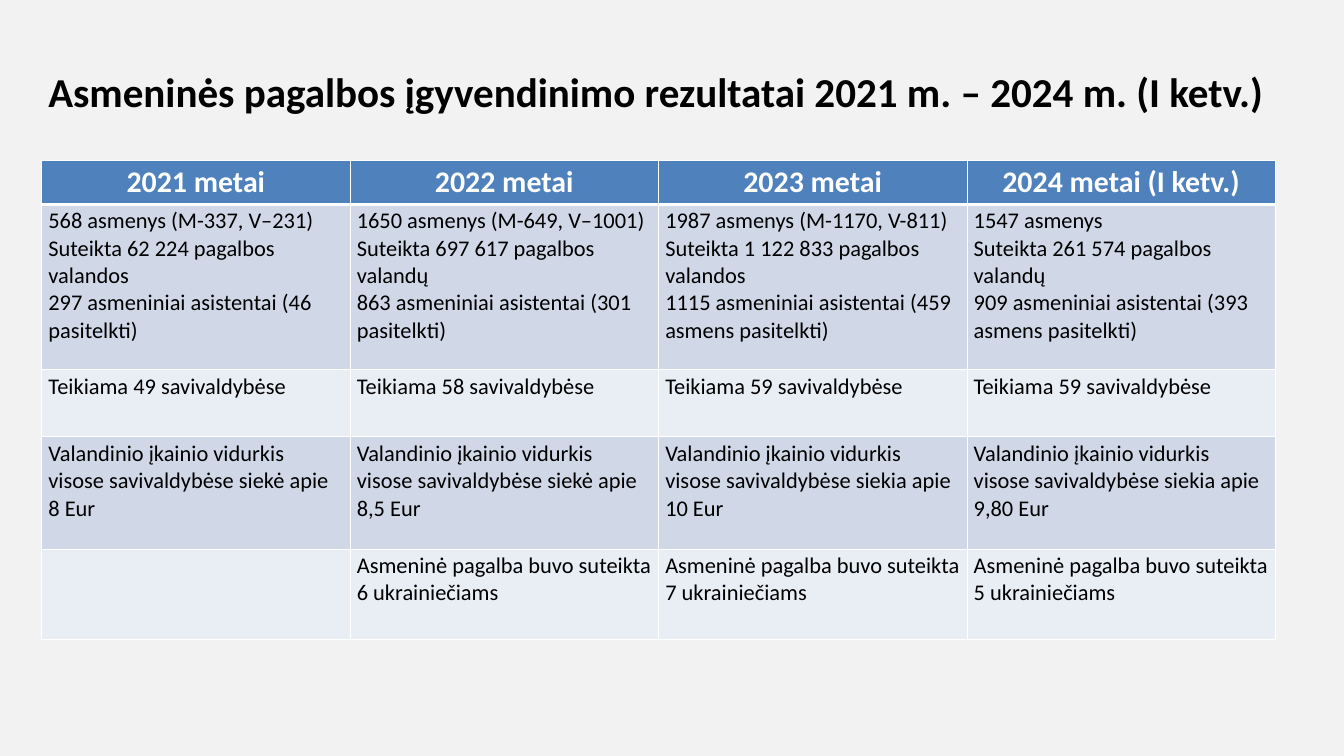
"""Build a slide comparing personal assistance results by year."""
from dataclasses import dataclass

from lxml import etree
from pptx import Presentation
from pptx.dml.color import RGBColor
from pptx.enum.text import MSO_ANCHOR, PP_ALIGN
from pptx.oxml.ns import qn
from pptx.util import Pt

CENTER, LEFT = PP_ALIGN.CENTER, PP_ALIGN.LEFT
MIDDLE = MSO_ANCHOR.MIDDLE
FONT = "Calibri"
COLORS = {
    "page": "F2F2F2",
    "header": "4F81BD",
    "dark band": "D0D8E8",
    "light band": "E9EDF4",
    "text": "000000",
    "white": "FFFFFF",
}
LEFT_EDGE, CONTENT_WIDTH = 44.64, 1321.92
ROW_HEIGHTS = [46.8, 177.12, 72, 120.24, 96.48]
THIN, THICK = 1, 3


@dataclass
class YearResult:
    """Results of one year, shown as one table column."""

    year: str
    people: str
    hours: str
    assistants: str
    municipalities: int
    rate: str
    ukrainians: str

    def cell_texts(self) -> list[list[str]]:
        """Return the paragraphs of each cell from top to bottom."""
        return [
            [self.year],
            [
                f"{self.people}",
                f"Suteikta {self.hours}",
                f"{self.assistants} pasitelkti)",
            ],
            [f"Teikiama {self.municipalities} savivaldybėse"],
            [f"Valandinio įkainio vidurkis visose savivaldybėse {self.rate} Eur"],
            [f"Asmeninė pagalba buvo suteikta {self.ukrainians} ukrainiečiams"]
            if self.ukrainians else [],
        ]


@dataclass
class TextStyle:
    """Look of a paragraph."""

    size: float
    color: str
    bold: bool = False
    align: PP_ALIGN = LEFT


TITLE_STYLE = TextStyle(44, "text", bold=True)
HEADER_STYLE = TextStyle(32, "white", bold=True, align=CENTER)
BODY_STYLE = TextStyle(24, "text")

RESULTS = [
    YearResult("2021 metai", "568 asmenys (M-337, V–231)", "62 224 pagalbos valandos",
               "297 asmeniniai asistentai (46", 49, "siekė apie 8", ""),
    YearResult("2022 metai", "1650 asmenys (M-649, V–1001)", "697 617 pagalbos valandų",
               "863 asmeniniai asistentai (301", 58, "siekė apie 8,5", "6"),
    YearResult("2023 metai", "1987 asmenys (M-1170, V-811)", "1 122 833 pagalbos valandos",
               "1115 asmeniniai asistentai (459 asmens", 59, "siekia apie 10", "7"),
    YearResult("2024 metai (I ketv.)", "1547 asmenys", "261 574 pagalbos valandų",
               "909 asmeniniai asistentai (393 asmens", 59, "siekia apie 9,80", "5"),
]


def rgb(name: str) -> RGBColor:
    """Return a named colour."""
    return RGBColor.from_string(COLORS[name])


def write_text(frame, lines: list[str], style: TextStyle) -> None:
    """Fill a text frame with one styled paragraph per line."""
    for index, line in enumerate(lines):
        paragraph = frame.paragraphs[0] if index == 0 else frame.add_paragraph()
        paragraph.text = line
        paragraph.alignment = style.align
        paragraph.font.name = FONT
        paragraph.font.size = Pt(style.size)
        paragraph.font.bold = style.bold
        paragraph.font.color.rgb = rgb(style.color)


def set_borders(cell, top: float, bottom: float) -> None:
    """Draw white borders around a cell."""
    properties = cell._tc.get_or_add_tcPr()
    for side, width in {"L": THIN, "R": THIN, "T": top, "B": bottom}.items():
        line = etree.SubElement(properties, qn(f"a:ln{side}"), w=str(Pt(width)))
        fill = etree.SubElement(line, qn("a:solidFill"))
        etree.SubElement(fill, qn("a:srgbClr"), val=COLORS["white"])


def add_title(page, text: str) -> None:
    """Add the slide heading."""
    box = page.shapes.add_textbox(Pt(LEFT_EDGE), Pt(36), Pt(CONTENT_WIDTH), Pt(123.84))
    frame = box.text_frame
    frame.word_wrap = True
    frame.vertical_anchor = MIDDLE
    write_text(frame, [text], TITLE_STYLE)


def add_results_table(page, results: list[YearResult]) -> None:
    """Add the table with one column per year."""
    table = page.shapes.add_table(
        len(ROW_HEIGHTS), len(results), Pt(LEFT_EDGE), Pt(172.08),
        Pt(CONTENT_WIDTH), Pt(sum(ROW_HEIGHTS)),
    ).table
    for row, height in zip(table.rows, ROW_HEIGHTS):
        row.height = Pt(height)
    for column, result in enumerate(results):
        table.columns[column].width = Pt(CONTENT_WIDTH / len(results))
        for row, lines in enumerate(result.cell_texts()):
            cell = table.cell(row, column)
            is_header = row == 0
            band = "dark band" if row % 2 else "light band"
            set_borders(cell, THICK if row == 1 else THIN, THICK if is_header else THIN)
            cell.fill.solid()
            cell.fill.fore_color.rgb = rgb("header" if is_header else band)
            write_text(cell.text_frame, lines, HEADER_STYLE if is_header else BODY_STYLE)


def main() -> None:
    """Build and save the deck."""
    deck = Presentation()
    deck.slide_width, deck.slide_height = Pt(1440), Pt(810)
    page = deck.slides.add_slide(deck.slide_layouts[6])
    page.background.fill.solid()
    page.background.fill.fore_color.rgb = rgb("page")
    add_title(page, "Asmeninės pagalbos įgyvendinimo rezultatai 2021 m. – 2024 m. (I ketv.)")
    add_results_table(page, RESULTS)
    deck.save("out.pptx")


if __name__ == "__main__":
    main()
